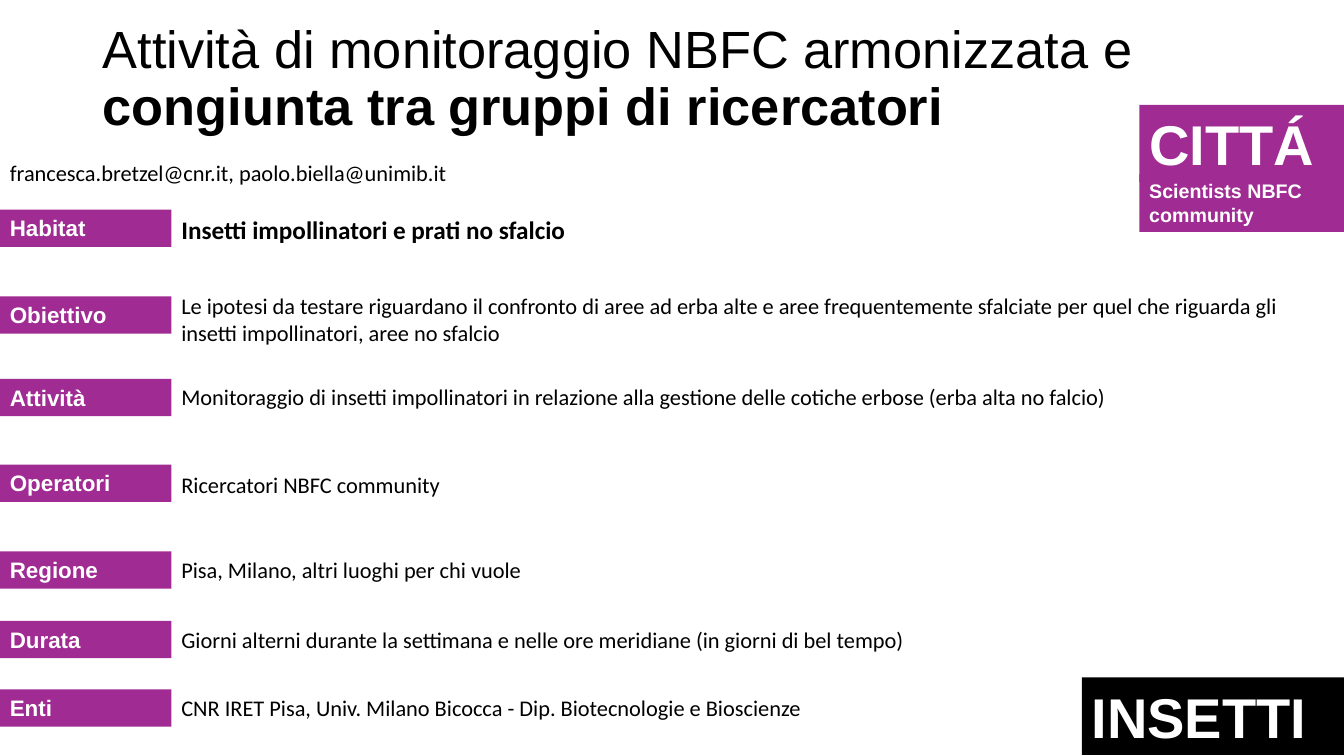
import pptx
import pptx.util
import pptx.dml.color
import pptx.enum.shapes
import pptx.enum.text

SLIDE_W, SLIDE_H = 13.33, 7.5
PURPLE, BLACK, WHITE = "A02B93", "000000", "FFFFFF"
LABEL_W, LINE_H = 1.7, 0.37
ALIGN = pptx.enum.text.PP_ALIGN
ANCHOR = pptx.enum.text.MSO_ANCHOR

# label, top of label, text, rise of text above label, text height, text format
ROWS = [
    ("Habitat", 2.08, "Insetti impollinatori e prati no sfalcio", 0, 0.4,
     dict(size=18, bold=True)),
    ("Obiettivo", 2.94,
     "Le ipotesi da testare riguardano il confronto di aree ad erba alte e aree "
     "frequentemente sfalciate per quel che riguarda gli insetti impollinatori, "
     "aree no sfalcio", 0.09, 0.64, {}),
    ("Attività", 3.76,
     "Monitoraggio di insetti impollinatori in relazione alla gestione delle "
     "cotiche erbose (erba alta no falcio)", 0.03, 0.69,
     dict(align=ALIGN.JUSTIFY, spacing=1.07)),
    ("Operatori", 4.61, "Ricercatori NBFC community", 0, 0.66,
     dict(align=ALIGN.JUSTIFY, spacing=1.07)),
    ("Regione", 5.47, "Pisa, Milano, altri luoghi per chi vuole", 0, LINE_H, {}),
    ("Durata", 6.16,
     "Giorni alterni durante la settimana e nelle ore meridiane "
     "(in giorni di bel tempo)", 0, LINE_H, {}),
    ("Enti", 6.84,
     "CNR IRET Pisa, Univ. Milano Bicocca - Dip. Biotecnologie e Bioscienze",
     0, LINE_H, {}),
]


def color(hex_code):
    return pptx.dml.color.RGBColor.from_string(hex_code)


def add_text(slide, box, text, fill=None, size=16, font="Calibri", ink=BLACK,
             bold=False, bold_tail="", align=ALIGN.LEFT, spacing=None,
             anchor=ANCHOR.TOP):
    """Place text in a box (left, top, width, height), on a filled bar if asked."""
    place = [pptx.util.Inches(length) for length in box]
    if fill:
        holder = slide.shapes.add_shape(
            pptx.enum.shapes.MSO_SHAPE.RECTANGLE, *place)
        holder.shadow.inherit = False
        holder.fill.solid()
        holder.fill.fore_color.rgb = color(fill)
        holder.line.fill.background()
    else:
        holder = slide.shapes.add_textbox(*place)
    frame = holder.text_frame
    frame.word_wrap = True
    frame.vertical_anchor = anchor
    paragraph = frame.paragraphs[0]
    paragraph.alignment = align
    if spacing:
        paragraph.line_spacing = spacing
    for words, heavy in ((text, bold), (bold_tail, True)):
        if words:
            run = paragraph.add_run()
            run.text = words
            run.font.size = pptx.util.Pt(size)
            run.font.name = font
            run.font.bold = heavy
            run.font.color.rgb = color(ink)


def add_bar(slide, box, text, fill=PURPLE, size=16):
    add_text(slide, box, text, fill=fill, size=size, font="Arial", ink=WHITE,
             bold=True)


def add_header(slide, box):
    left, top, width, height = box
    add_text(slide, (left + 0.92, top + 0.07, 10.7, 1.45),
             "Attività di monitoraggio NBFC armonizzata e ",
             bold_tail="congiunta tra gruppi di ricercatori",
             size=37.4, font="Arial", spacing=0.9, anchor=ANCHOR.MIDDLE)
    add_text(slide, (left, top + height - LINE_H, 9.43, LINE_H),
             "francesca.bretzel@cnr.it, paolo.biella@unimib.it", spacing=1.07)


def add_row(slide, box, label, text, rise, text_h, text_format):
    left, top, width, height = box
    add_bar(slide, (left, top, LABEL_W, height), label)
    add_text(slide, (left + LABEL_W, top - rise, width - LABEL_W, text_h),
             text, **text_format)


def add_habitat_badge(slide, box):
    left, top, width, height = box
    community_h = 0.57
    add_bar(slide, (left, top, width, 0.77), "CITTÁ", size=40)
    add_bar(slide, (left, top + height - community_h, width, community_h),
            "Scientists NBFC community", size=14)


def main():
    deck = pptx.Presentation()
    deck.slide_width = pptx.util.Inches(SLIDE_W)
    deck.slide_height = pptx.util.Inches(SLIDE_H)
    slide = deck.slides.add_slide(deck.slide_layouts[6])

    # Title and contacts
    add_header(slide, (0, 0, SLIDE_W, 1.88))
    # Project sheet
    for label, top, *content in ROWS:
        add_row(slide, (0, top, 12.82, LINE_H), label, *content)
    # Badges on the right edge
    add_habitat_badge(slide, (SLIDE_W - 2.03, 1.04, 2.03, 1.26))
    add_bar(slide, (SLIDE_W - 2.6, 6.72, 2.6, 0.77), "INSETTI", fill=BLACK, size=40)

    deck.save("out.pptx")


if __name__ == "__main__":
    main()
